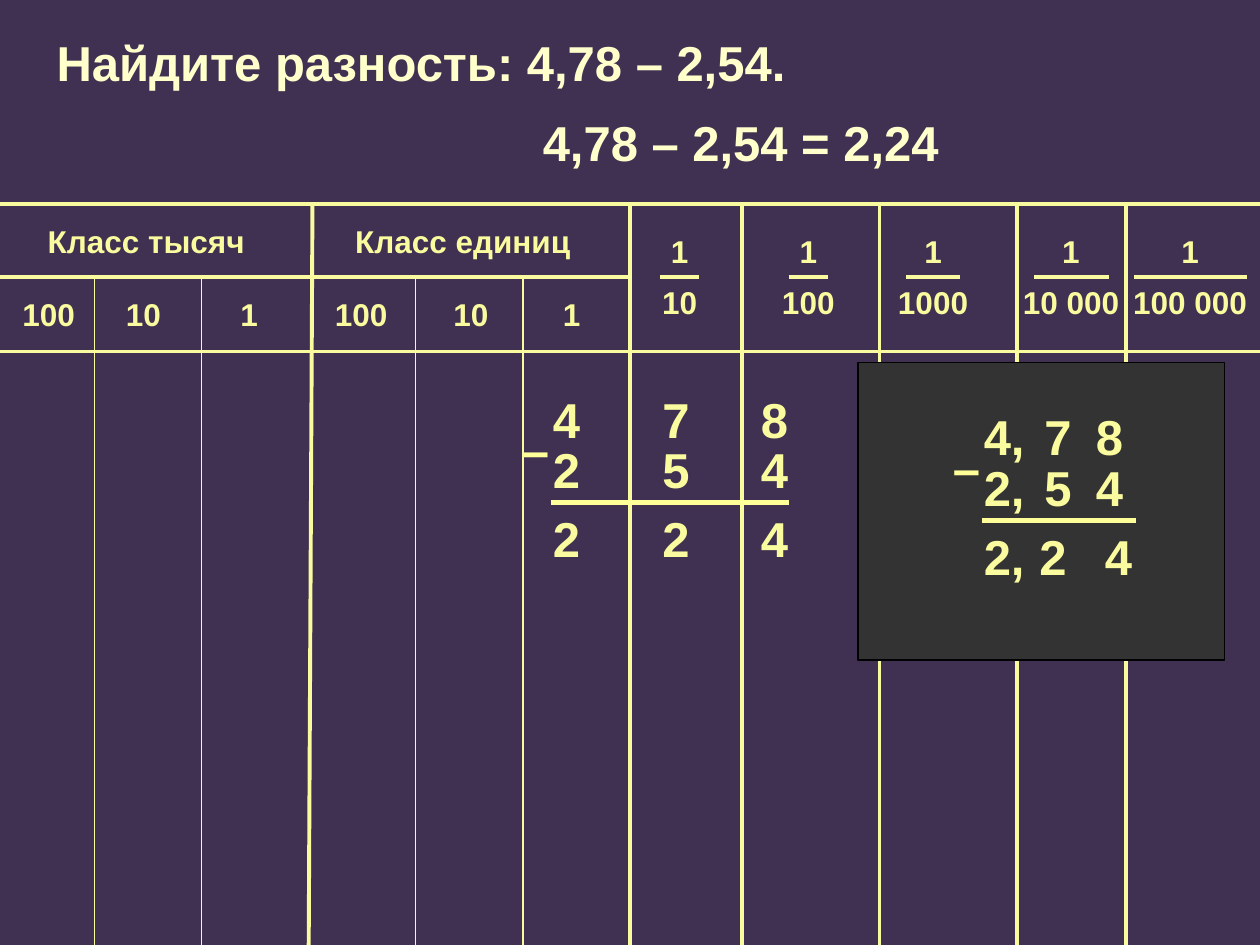
from dataclasses import dataclass

from lxml import etree
from pptx import Presentation
from pptx.dml.color import RGBColor
from pptx.enum.shapes import MSO_CONNECTOR, MSO_SHAPE
from pptx.enum.text import MSO_AUTO_SIZE, PP_ALIGN
from pptx.oxml.ns import qn
from pptx.util import Inches, Pt


@dataclass(frozen=True)
class Theme:
    background: str = "403152"
    grid: str = "FAFA9E"
    accent: str = "FFFF99"
    title: str = "FFFFCC"
    panel: str = "333333"
    panel_line: str = "000000"
    font: str = "Arial"
    label_size: int = 18
    digit_size: int = 28
    thin: float = 0.75
    medium: float = 2.25
    thick: float = 3


@dataclass(frozen=True)
class Box:
    left: float
    top: float
    width: float
    height: float


THEME = Theme()
LABEL_HEIGHT = 0.4
DIGIT_HEIGHT = 0.57


def add_text(shapes, box, text, size=THEME.label_size, color=THEME.grid,
             align=PP_ALIGN.LEFT):
    tb = shapes.add_textbox(Inches(box.left), Inches(box.top),
                            Inches(box.width), Inches(box.height))
    tf = tb.text_frame
    tf.word_wrap = True
    tf.auto_size = MSO_AUTO_SIZE.SHAPE_TO_FIT_TEXT
    p = tf.paragraphs[0]
    p.alignment = align
    r = p.add_run()
    r.text = text
    r.font.name = THEME.font
    r.font.size = Pt(size)
    r.font.bold = True
    r.font.color.rgb = RGBColor.from_string(color)


def add_line(shapes, x1, y1, x2, y2, weight=THEME.medium, color=THEME.grid):
    line = shapes.add_connector(MSO_CONNECTOR.STRAIGHT, Inches(x1), Inches(y1),
                                Inches(x2), Inches(y2))
    line.line.color.rgb = RGBColor.from_string(color)
    line.line.width = Pt(weight)
    etree.SubElement(line._element.spPr, qn("a:effectLst"))


def add_fraction(shapes, box, denominator, bar_left, bar_right):
    """Stack 1 over the denominator, with the bar at the middle of the box."""
    middle = box.top + box.height / 2
    for text, top in (("1", box.top), (denominator, middle)):
        add_text(shapes, Box(box.left, top, box.width, LABEL_HEIGHT), text,
                 align=PP_ALIGN.CENTER)
    add_line(shapes, box.left + bar_left, middle, box.left + bar_right, middle)


def add_place_value_grid(s, box):
    shapes = s.shapes.add_group_shape().shapes
    left, top = box.left, box.top
    right, bottom = left + box.width, top + box.height
    class_bottom, header_bottom = top + 0.58, top + 1.17
    fraction_left = left + 5

    for x in (0.75, 1.6, 3.3, 4.15):
        add_line(shapes, left + x, class_bottom, left + x, bottom, THEME.thin)
    add_line(shapes, left + 2.48, top, left + 2.45, bottom)
    for x in (5, 5.89, 6.98, 8.07, 8.94):
        add_line(shapes, left + x, top, left + x, bottom)
    for y, end in ((top, right), (class_bottom, fraction_left),
                   (header_bottom, right)):
        add_line(shapes, left, y, end, y)

    for x, text in ((0.28, "Класс тысяч"), (2.72, "Класс единиц")):
        add_text(shapes, Box(left + x, top + 0.09, 2.12, LABEL_HEIGHT), text)
    places = ((0.08, "100"), (0.9, "10"), (1.81, "1"),
              (2.56, "100"), (3.5, "10"), (4.37, "1"))
    for x, text in places:
        add_text(shapes, Box(left + x, top + 0.67, 0.7, LABEL_HEIGHT), text)

    fractions = ((5.08, 0.63, "10", 0.16, 0.47),
                 (6.1, 0.63, "100", 0.16, 0.47),
                 (6.97, 0.87, "1000", 0.22, 0.65),
                 (7.91, 1.18, "10 000", 0.3, 0.89),
                 (8.54, 1.81, "100 000", 0.46, 1.36))
    for x, width, denominator, bar_left, bar_right in fractions:
        add_fraction(shapes, Box(left + x, top + 0.17, width, 0.82),
                     denominator, bar_left, bar_right)


def add_subtraction(s, box, rows):
    """Write a column subtraction; each row lists (offset, digit) pairs."""
    shapes = s.shapes.add_group_shape().shapes
    row_offsets = (0, 0.4, 0.95)
    for offset, row in zip(row_offsets, rows):
        for x, digit in row:
            cell = Box(box.left + x, box.top + offset,
                       0.2 + 0.2 * len(digit), DIGIT_HEIGHT)
            add_text(shapes, cell, digit, THEME.digit_size)
    rule = box.top + row_offsets[-1]
    add_line(shapes, box.left + 0.08, rule, box.left + box.width, rule,
             THEME.thick, THEME.accent)
    add_text(shapes, Box(box.left - 0.39, box.top + 0.24, 0.7, DIGIT_HEIGHT),
             "–", THEME.digit_size, THEME.accent, PP_ALIGN.CENTER)


def add_grid_subtraction(s, box):
    columns = (0, 0.87, 1.65)
    add_subtraction(s, box, [list(zip(columns, number))
                             for number in ("478", "254", "224")])


def add_decimal_panel(s, box):
    panel = s.shapes.add_shape(MSO_SHAPE.RECTANGLE, Inches(box.left),
                               Inches(box.top), Inches(box.width),
                               Inches(box.height))
    panel.shadow.inherit = False
    panel.fill.solid()
    panel.fill.fore_color.rgb = RGBColor.from_string(THEME.panel)
    panel.line.color.rgb = RGBColor.from_string(THEME.panel_line)
    panel.line.width = Pt(THEME.thin)

    rows = (((0, "4,"), (0.48, "7"), (0.89, "8")),
            ((0, "2,"), (0.48, "5"), (0.89, "4")),
            ((0, "2,"), (0.44, "2"), (0.96, "4")))
    add_subtraction(s, Box(box.left + 0.9, box.top + 0.3, 1.31, 1.52), rows)


def add_heading(s, box):
    lines = ((0, 0, 6.69, "Найдите разность: 4,78 – 2,54."),
             (3.86, 0.63, 3.54, "4,78 – 2,54 = 2,24"))
    for x, y, width, text in lines:
        add_text(s.shapes, Box(box.left + x, box.top + y, width, DIGIT_HEIGHT),
                 text, THEME.digit_size, THEME.title)


def main():
    prs = Presentation()
    prs.slide_width, prs.slide_height = Inches(10), Inches(7.5)
    s = prs.slides.add_slide(prs.slide_layouts[6])
    s.background.fill.solid()
    s.background.fill.fore_color.rgb = RGBColor.from_string(THEME.background)

    add_place_value_grid(s, Box(0, 1.62, 10, 5.88))
    add_grid_subtraction(s, Box(4.29, 3.04, 1.97, 1.52))
    add_decimal_panel(s, Box(6.81, 2.88, 2.91, 2.36))
    add_heading(s, Box(0.35, 0.21, 7.4, 1.2))
    prs.save("out.pptx")


if __name__ == "__main__":
    main()
